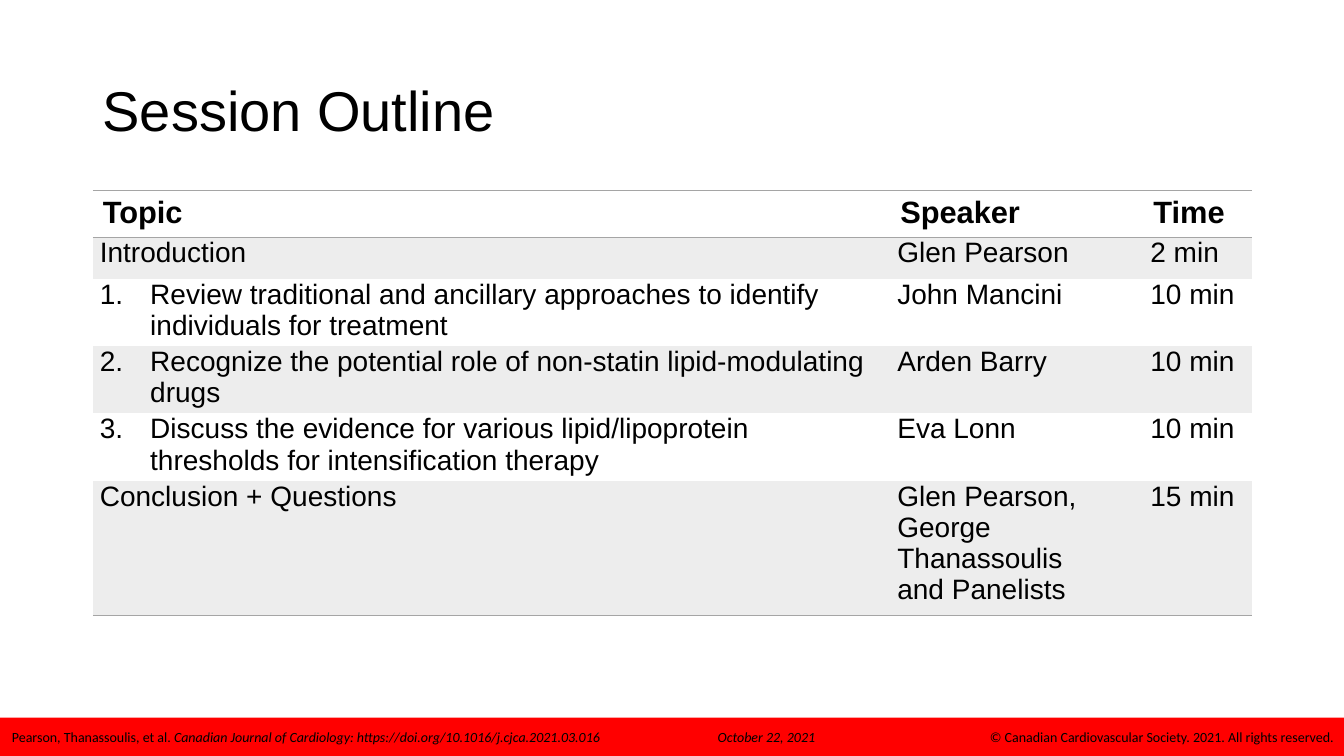
from lxml import etree
from pptx import Presentation
from pptx.dml.color import RGBColor
from pptx.enum import shapes, text
from pptx.oxml import ns
from pptx.util import Inches, Pt

TITLE = "Session Outline"
HEADINGS = ["Topic", "Speaker", "Time"]
# A number in front marks a numbered topic.
SESSIONS = [
    (None, "Introduction", "Glen Pearson", "2 min"),
    (1, "Review traditional and ancillary approaches to identify individuals for treatment",
     "John Mancini", "10 min"),
    (2, "Recognize the potential role of non-statin lipid-modulating drugs",
     "Arden Barry", "10 min"),
    (3, "Discuss the evidence for various lipid/lipoprotein thresholds for intensification therapy",
     "Eva Lonn", "10 min"),
    (None, "Conclusion + Questions", "Glen Pearson,\nGeorge Thanassoulis\nand Panelists", "15 min"),
]
AUTHORS = "Pearson, Thanassoulis, et al. "
JOURNAL = "Canadian Journal of Cardiology: https://doi.org/10.1016/j.cjca.2021.03.016"
DATE = "October 22, 2021"
RIGHTS = "© Canadian Cardiovascular Society. 2021. All rights reserved."

BLACK = RGBColor(0x00, 0x00, 0x00)
RED = RGBColor(0xFF, 0x00, 0x00)
RULE_GREY = RGBColor(0xA5, 0xA5, 0xA5)
BAND_GREY = RGBColor(0xED, 0xED, 0xED)

COLUMN_WIDTHS = [7.91, 2.51, 1.08]
ROW_HEIGHT = 0.41
PLAIN_TABLE_STYLE = "{2D5ABB26-0587-4C30-8999-92F81FD0307C}"


def style(para, name, size, bold=False):
    font = para.font
    font.name, font.size, font.bold = name, Pt(size), bold
    font.color.rgb = BLACK


def add_text(page, left, top, width, height, runs, size, name):
    """Add a one-paragraph box from (words, italic) pairs; return its frame."""
    box = page.shapes.add_textbox(Inches(left), Inches(top), Inches(width), Inches(height))
    frame = box.text_frame
    frame.word_wrap = True
    para = frame.paragraphs[0]
    for words, italic in runs:
        span = para.add_run()
        span.text = words
        if italic:
            span.font.italic = True
    style(para, name, size)
    return frame


def add_tab_stop(para, position):
    tabs = etree.SubElement(para._p.get_or_add_pPr(), ns.qn("a:tabLst"))
    etree.SubElement(tabs, ns.qn("a:tab"), pos=str(Inches(position)), algn="l")


def number(para, start):
    props = para._p.get_or_add_pPr()
    props.set("marL", str(Inches(0.5)))
    props.set("indent", str(-Inches(0.5)))
    etree.SubElement(props, ns.qn("a:buAutoNum"), type="arabicPeriod", startAt=str(start))


def add_rule(cell, side):
    """Draw a 1 pt line on the "T" or "B" side of a cell."""
    line = etree.Element(ns.qn("a:ln" + side), w=str(Pt(1)))
    fill = etree.SubElement(line, ns.qn("a:solidFill"))
    etree.SubElement(fill, ns.qn("a:srgbClr"), val=str(RULE_GREY))
    cell._tc.get_or_add_tcPr().insert(0, line)


def add_footer(page):
    bar = page.shapes.add_shape(shapes.MSO_SHAPE.RECTANGLE,
                                0, Inches(7.12), Inches(13.33), Inches(0.4))
    bar.shadow.inherit = False
    bar.fill.solid()
    bar.fill.fore_color.rgb = RED
    bar.line.fill.background()
    citation = add_text(page, 0.02, 7.18, 9.08, 0.27,
                        [(AUTHORS, False), (JOURNAL + "\t" + DATE, True)], 10, "Calibri")
    add_tab_stop_before_font(citation.paragraphs[0], 7)
    add_text(page, 9.72, 7.18, 3.71, 0.27, [(RIGHTS, False)], 10, "Calibri")


def add_tab_stop_before_font(para, position):
    """Add a tab stop, keeping the default font last as the schema wants."""
    add_tab_stop(para, position)
    props = para._p.get_or_add_pPr()
    props.append(props.find(ns.qn("a:defRPr")))


def add_sessions(page):
    rows = [(None, *HEADINGS)] + SESSIONS
    frame = page.shapes.add_table(len(rows), len(HEADINGS), Inches(0.92), Inches(1.89),
                                  Inches(sum(COLUMN_WIDTHS)), Inches(ROW_HEIGHT * len(rows)))
    table = frame.table
    table._tbl.tblPr.find(ns.qn("a:tableStyleId")).text = PLAIN_TABLE_STYLE
    table.first_row = table.horz_banding = False
    for column, width in zip(table.columns, COLUMN_WIDTHS):
        column.width = Inches(width)
    for r, (start, *entries) in enumerate(rows):
        table.rows[r].height = Inches(ROW_HEIGHT)
        header = r == 0
        for c, entry in enumerate(entries):
            cell = table.cell(r, c)
            cell.text = entry
            if not header:
                cell.margin_left = cell.margin_right = Inches(0.07)
                cell.margin_top = cell.margin_bottom = 0
            if r % 2:
                cell.fill.solid()
                cell.fill.fore_color.rgb = BAND_GREY
            else:
                cell.fill.background()
            if header or r == len(rows) - 1:
                add_rule(cell, "B")
            if header:
                add_rule(cell, "T")
            if start and c == 0:
                number(cell.text_frame.paragraphs[0], start)
            for para in cell.text_frame.paragraphs:
                style(para, "Arial", 22 if header else 20, bold=header)


def main():
    deck = Presentation()
    deck.slide_width, deck.slide_height = Inches(13.33), Inches(7.5)
    page = deck.slides.add_slide(deck.slide_layouts[6])
    add_footer(page)
    title = add_text(page, 0.92, 0.4, 11.5, 1.45, [(TITLE, False)], 40, "Arial")
    title.vertical_anchor = text.MSO_ANCHOR.MIDDLE
    title.paragraphs[0].line_spacing = 0.9
    add_sessions(page)
    deck.save("out.pptx")


if __name__ == "__main__":
    main()
